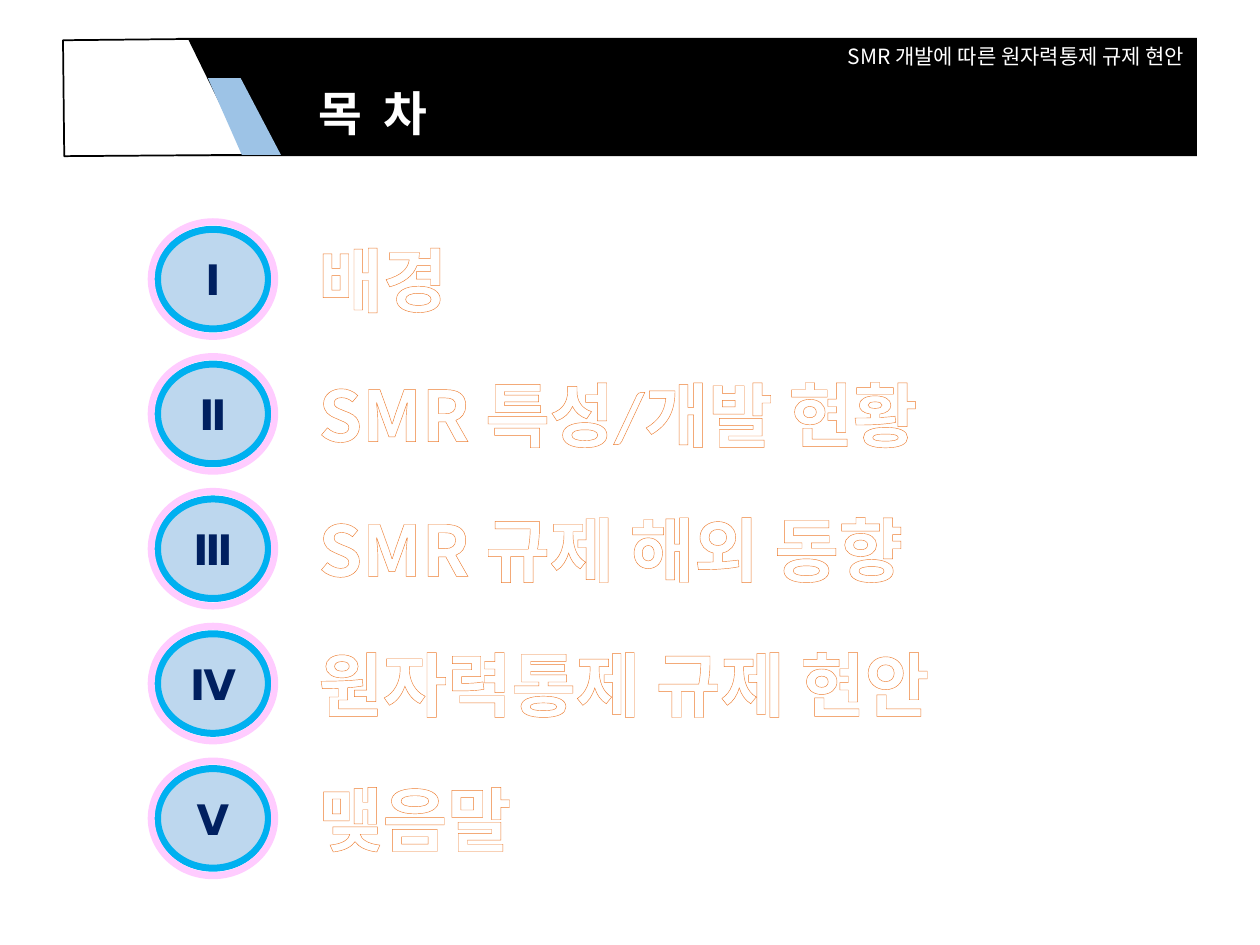
from dataclasses import dataclass

from lxml.etree import SubElement
from pptx import Presentation
from pptx.dml.color import RGBColor
from pptx.enum.shapes import MSO_SHAPE as Shape
from pptx.enum.text import MSO_ANCHOR as Anchor, PP_ALIGN as Align
from pptx.oxml.ns import qn
from pptx.util import Inches, Pt


@dataclass(frozen=True)
class Theme:
    black: str = "000000"
    white: str = "FFFFFF"
    stripe: str = "9DC3E6"
    disc: str = "BDD7EE"
    ring: str = "00B0F0"
    halo: str = "FFCCFF"
    numeral: str = "002060"
    outline: str = "ED7D31"
    latin: str = "Calibri"
    korean: str = "Noto Sans CJK KR"
    running_size: float = 12
    title_size: float = 27.2
    numeral_size: float = 24
    topic_size: float = 40


THEME = Theme()
# Each topic is a numeral and its (text, font) parts
TOPICS = [
    ("Ⅰ", [("배경", THEME.latin)]),
    ("Ⅱ", [("SMR ", THEME.korean), ("특성/개발 현황", THEME.latin)]),
    ("Ⅲ", [("SMR ", THEME.korean), ("규제 해외 동향", THEME.latin)]),
    ("Ⅳ", [("원자력통제 규제 현안", THEME.latin)]),
    ("Ⅴ", [("맺음말", THEME.latin)]),
]


def paint(shape, fill=None, line=None, width=1):
    shape.shadow.inherit = False
    if fill:
        shape.fill.solid()
        shape.fill.fore_color.rgb = RGBColor.from_string(fill)
    else:
        shape.fill.background()
    if line:
        shape.line.color.rgb = RGBColor.from_string(line)
        shape.line.width = Pt(width)
    else:
        shape.line.fill.background()


def add_run(paragraph, text, size, color, font=THEME.latin, bold=False):
    run = paragraph.add_run()
    run.text = text
    run.font.size, run.font.bold, run.font.name = Pt(size), bold, font
    run.font.color.rgb = RGBColor.from_string(color)
    return run


def outline_run(run, color, width):
    """Draw a thin contour around the letters of a run."""
    properties = run.font._element
    contour = SubElement(properties, qn("a:ln"), w=str(Pt(width)))
    fill = SubElement(contour, qn("a:solidFill"))
    SubElement(fill, qn("a:srgbClr"), val=color)
    properties.insert(0, contour)


def add_textbox(slide, left, top, width, height):
    frame = slide.shapes.add_textbox(left, top, width, height).text_frame
    frame.word_wrap = True
    return frame.paragraphs[0]


def add_polygon(slide, left, top, points):
    """Draw a closed outline from points in inches relative to left, top."""
    corners = [(left + Inches(x), top + Inches(y)) for x, y in points]
    builder = slide.shapes.build_freeform(*corners[0], scale=1.0)
    builder.add_line_segments(corners[1:], close=True)
    return builder.convert_to_shape()


def add_header(slide, left, top, width, height):
    inset = Inches(0.91)
    band = slide.shapes.add_shape(Shape.RECTANGLE, left + inset, top, width - inset, height)
    paint(band, THEME.black)
    band.text_frame.vertical_anchor = Anchor.TOP
    running_title = band.text_frame.paragraphs[0]
    running_title.alignment = Align.RIGHT
    add_run(running_title, "SMR 개발에 따른 원자력통제 규제 현안",
            THEME.running_size, THEME.white, THEME.korean)

    tab = add_polygon(slide, left, top, [(1, 0.01), (0, 0.02), (0.01, 0.94), (1.45, 0.93)])
    paint(tab, THEME.white, THEME.black)
    stripe = add_polygon(slide, left, top,
                         [(1.15, 0.32), (1.41, 0.32), (1.73, 0.93), (1.42, 0.93)])
    paint(stripe, THEME.stripe)


def add_title(slide, left, top, width, height):
    title = add_textbox(slide, left, top, width, height)
    for text in ("목", " ", "차"):
        run = add_run(title, text, THEME.title_size, THEME.white, bold=True)
        if text == " ":
            run.font._element.set("spc", "600")  # widened gap between the syllables


def add_badge(slide, left, top, width, height, numeral):
    margin_x, margin_y = Inches(0.05), Inches(0.06)
    disc = slide.shapes.add_shape(Shape.OVAL, left + margin_x, top + margin_y,
                                  width - 2 * margin_x, height - 2 * margin_y)
    paint(disc, THEME.disc, THEME.ring, 4)
    disc.text_frame.vertical_anchor = Anchor.MIDDLE
    label = disc.text_frame.paragraphs[0]
    label.alignment = Align.CENTER
    add_run(label, numeral, THEME.numeral_size, THEME.numeral, bold=True)

    halo = slide.shapes.add_shape(Shape.OVAL, left, top, width, height)
    paint(halo, line=THEME.halo, width=4)


def add_topic(slide, left, top, width, height, numeral, parts):
    add_badge(slide, left, top, Inches(0.98), height, numeral)
    indent = Inches(1.23)
    topic = add_textbox(slide, left + indent, top + Inches(0.07), width - indent, Inches(0.77))
    for text, font in parts:
        run = add_run(topic, text, THEME.topic_size, THEME.white, font, bold=True)
        outline_run(run, THEME.outline, 0.52)


def add_contents(slide, left, top, width, height):
    row_height = Inches(0.91)
    pitch = (height - row_height) // (len(TOPICS) - 1)
    for row, (numeral, parts) in enumerate(TOPICS):
        add_topic(slide, left, top + row * pitch, width, row_height, numeral, parts)


def main():
    deck = Presentation()
    deck.slide_width, deck.slide_height = Inches(10), Inches(7.5)
    slide = deck.slides.add_slide(deck.slide_layouts[6])
    add_header(slide, Inches(0.5), Inches(0.3), Inches(9), Inches(0.94))
    add_contents(slide, Inches(1.2), Inches(1.76), Inches(7.6), Inches(5.19))
    add_title(slide, Inches(2.43), Inches(0.62), Inches(6.84), Inches(0.48))
    deck.save("out.pptx")


if __name__ == "__main__":
    main()
